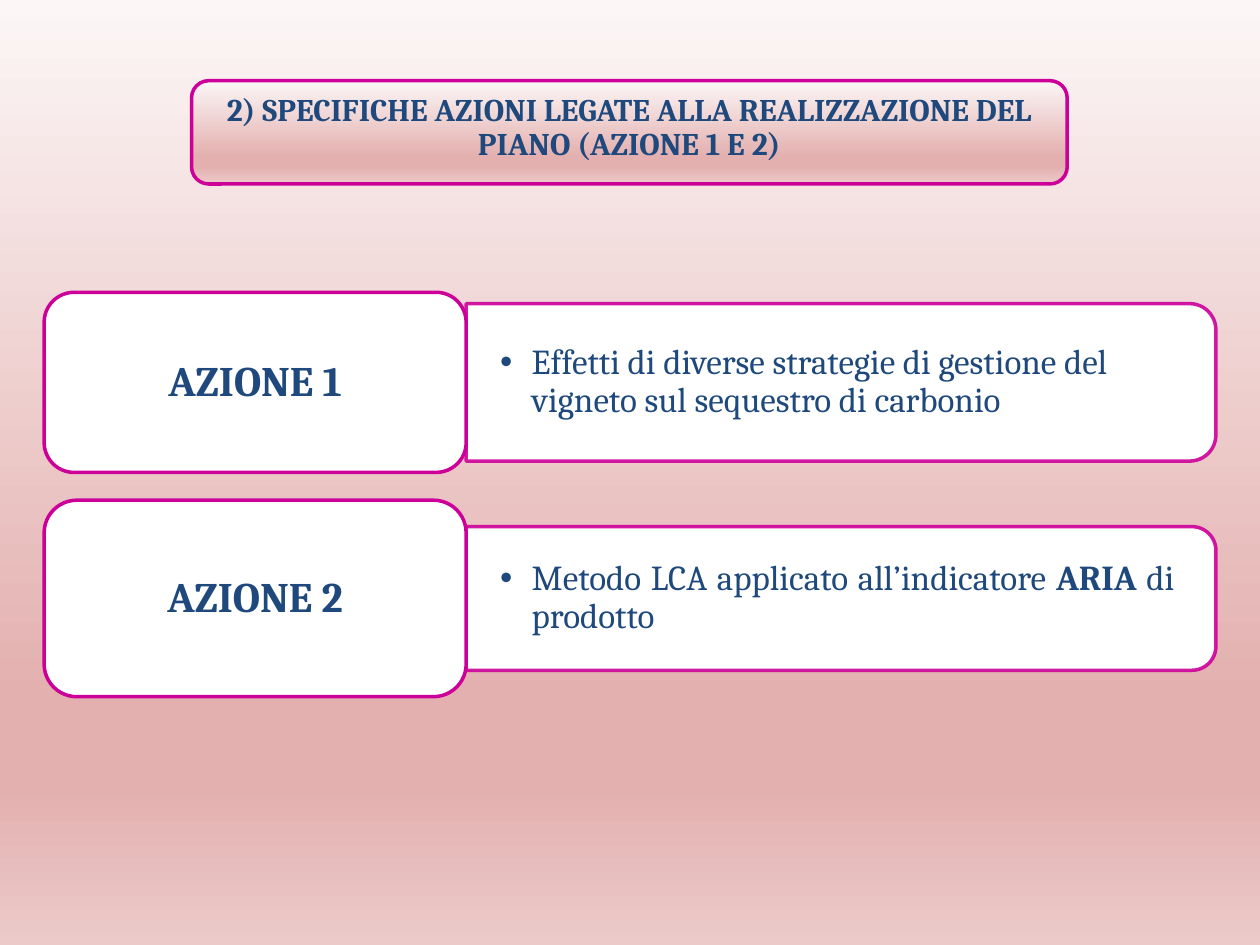
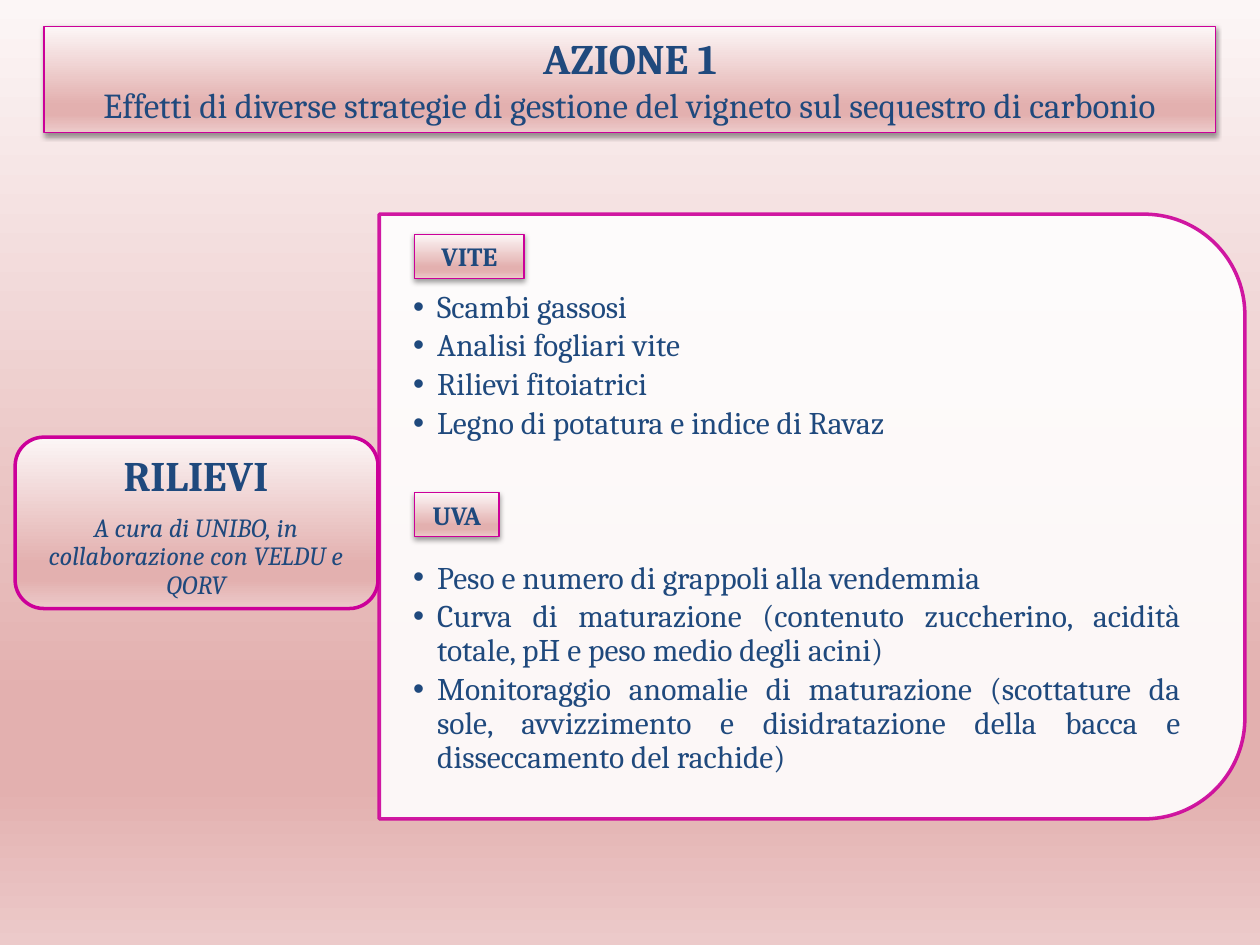
from lxml.etree import SubElement as Sub
from pptx import Presentation
from pptx.dml.color import RGBColor
from pptx.enum.shapes import MSO_SHAPE as Form
from pptx.enum.text import MSO_ANCHOR as Anchor, PP_ALIGN as Align
from pptx.oxml.ns import qn
from pptx.util import Inches, Pt

FONT, BLUE, PINK, WHITE = "Cambria", "1F497D", "CC0099", "FFFFFF"
FADE = [(0, "FCF6F6"), (74, "E3B0AF"), (83, "E3B0AF"), (100, "ECCACA")]
EFFECT = "Effetti di diverse strategie di gestione del vigneto sul sequestro di carbonio"
PLAN = "2) SPECIFICHE AZIONI LEGATE ALLA REALIZZAZIONE DEL PIANO (AZIONE 1 E 2)"
ACTIONS = [
    ("AZIONE 1", 2.32, 1.43, 1.25, EFFECT, Align.LEFT),
    ("AZIONE 2", 3.97, 1.56, 1.14,
     "Metodo LCA applicato all’indicatore *ARIA* di prodotto", Align.JUSTIFY),
]
SURVEY = "A cura di UNIBO, in collaborazione con VELDU e QORV"
GROUPS = [
    ("VITE", 1.86, 0.87, 2.31, 1.3, [
        "Scambi gassosi", "Analisi fogliari vite", "Rilievi fitoiatrici",
        "Legno di potatura e indice di Ravaz"]),
    ("UVA", 3.91, 0.67, 4.46, 1.8, [
        "Peso e numero di grappoli alla vendemmia",
        "Curva di maturazione (contenuto zuccherino, acidità totale, pH e peso medio degli acini)",
        "Monitoraggio anomalie di maturazione (scottature da sole, avvizzimento e "
        "disidratazione della bacca e disseccamento del rachide)"]),
]


def rgb(code):
    return RGBColor.from_string(code)


def clear(node, share):
    for color in node.iter(qn("a:srgbClr")):
        Sub(color, qn("a:alpha"), val=str(share * 1000))


def fade(fill, root):
    fill.gradient()
    grad = next(root.iter(qn("a:gradFill")))
    for old in list(grad):
        grad.remove(old)
    stops = Sub(grad, qn("a:gsLst"))
    for spot, code in FADE:
        stop = Sub(stops, qn("a:gs"), pos=str(spot * 1000))
        Sub(stop, qn("a:srgbClr"), val=code)
    Sub(grad, qn("a:lin"), ang="5400000", scaled="0")


def shape(slide, form, box, fill=None, width=2):
    item = slide.shapes.add_shape(form, *map(Inches, box))
    item.shadow.inherit = False
    if fill:
        item.fill.solid()
        item.fill.fore_color.rgb = rgb(fill)
    else:
        fade(item.fill, item.element)
    item.line.color.rgb = rgb(PINK)
    item.line.width = Pt(width)
    return item


def panel(slide, x, y, w, h, share=100):
    turn = (x + (w - h) / 2, y + (h - w) / 2, h, w)
    item = shape(slide, Form.ROUND_2_SAME_RECTANGLE, turn, WHITE)
    item.rotation = 90
    if share < 100:
        clear(item.element.spPr.find(qn("a:solidFill")), share)
    clear(item.element.spPr.find(qn("a:ln")), 90)


def plate(slide, box):
    item = shape(slide, Form.RECTANGLE, box, width=0.75)
    glow = item.element.spPr.find(qn("a:effectLst"))
    drop = Sub(glow, qn("a:outerShdw"), blurRad="40000", dist="20000",
               dir="5400000", rotWithShape="0")
    Sub(drop, qn("a:srgbClr"), val="000000")
    clear(drop, 38)
    return item


def write(item, lines, align=Align.CENTER, anchor=Anchor.TOP, side=0.1,
          edge=0.05, lead=None, after=0, dent=0):
    frame = item.text_frame
    frame.word_wrap = True
    frame.vertical_anchor = anchor
    frame.margin_left = frame.margin_right = Inches(side)
    frame.margin_top = frame.margin_bottom = Inches(edge)
    for i, (text, size, bold, slant) in enumerate(lines):
        para = frame.add_paragraph() if i else frame.paragraphs[0]
        para.alignment = align
        if lead:
            para.line_spacing = lead
        para.space_after = Pt(size * after)
        if dent:
            props = para._p.get_or_add_pPr()
            props.set("marL", str(Inches(dent)))
            props.set("indent", str(-Inches(dent)))
            Sub(props, qn("a:buFont"), typeface="Arial")
            Sub(props, qn("a:buChar"), char="•")
        font = para.font
        font.name, font.size = FONT, Pt(size)
        font.bold, font.italic = bold, slant
        font.color.rgb = rgb(BLUE)
        for j, part in enumerate(text.split("*")):
            run = para.add_run()
            run.text = part
            if j % 2:
                run.font.bold = True


def label(slide, box):
    return slide.shapes.add_textbox(*map(Inches, box))


def start(deck):
    slide = deck.slides.add_slide(deck.slide_layouts[6])
    fade(slide.background.fill, slide.element)
    return slide


def plan(deck):
    slide = start(deck)
    shape(slide, Form.ROUNDED_RECTANGLE, (1.52, 0.64, 6.95, 0.82))
    for name, top, high, thin, text, align in ACTIONS:
        y = top + (high - thin) / 2
        panel(slide, 3.7, y, 5.95, thin)
        write(label(slide, (3.7, y, 5.89, thin)), [(text, 20, False, False)],
              align, Anchor.MIDDLE, 0.27, 0.14, 0.9, 0.15, 0.25)
        tab = shape(slide, Form.ROUNDED_RECTANGLE, (0.35, top, 3.35, high), WHITE)
        write(tab, [(name, 24, True, False)], anchor=Anchor.MIDDLE, lead=0.9)
    write(label(slide, (1.69, 0.7, 6.61, 0.65)), [(PLAN, 18, True, False)], lead=0.9)


def survey(deck):
    slide = start(deck)
    panel(slide, 3.01, 1.7, 6.87, 4.8, 90)
    shape(slide, Form.ROUNDED_RECTANGLE, (0.12, 3.47, 2.88, 1.36))
    write(label(slide, (0.18, 3.57, 2.75, 1.23)),
          [("RILIEVI", 24, True, False), (SURVEY, 15, False, True)],
          anchor=Anchor.MIDDLE, lead=0.9, after=0.35)
    for name, top, wide, y, high, items in GROUPS:
        write(label(slide, (3.01, y, 6.63, high)),
              [(text, 18, False, False) for text in items],
              Align.JUSTIFY, side=0.27, edge=0, lead=0.9, after=0.15, dent=0.19)
        write(plate(slide, (3.29, top, wide, 0.35)), [(name, 15, True, False)])
    write(plate(slide, (0.35, 0.21, 9.3, 0.84)),
          [("AZIONE 1", 24, True, False), (EFFECT, 20, False, False)])


def main():
    """Build the two slides of the action plan."""
    deck = Presentation()
    deck.slide_width, deck.slide_height = Inches(10), Inches(7.5)
    plan(deck)
    survey(deck)
    deck.save("out.pptx")


if __name__ == "__main__":
    main()
